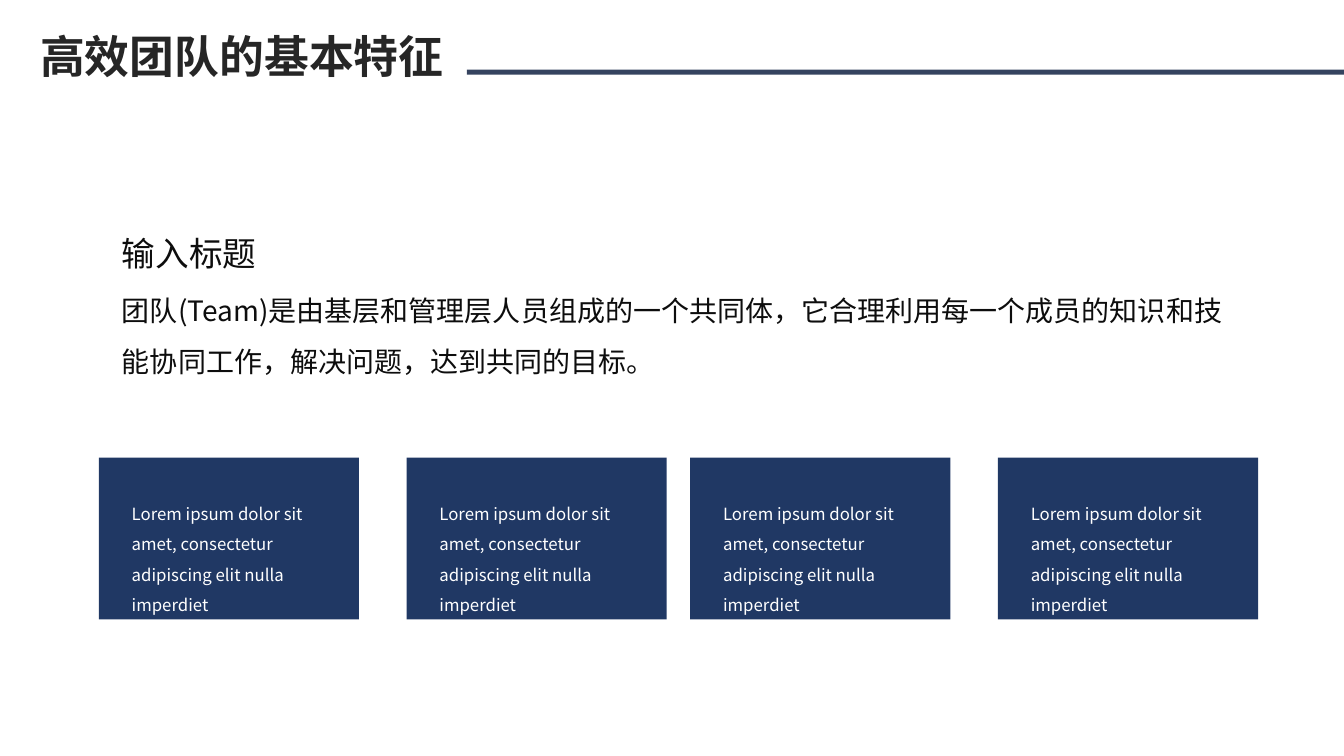
from lxml import etree
from pptx import Presentation
from pptx.dml.color import RGBColor
from pptx.enum.shapes import MSO_SHAPE
from pptx.enum.text import MSO_ANCHOR, MSO_AUTO_SIZE
from pptx.oxml.ns import qn
from pptx.util import Pt

RECTANGLE = MSO_SHAPE.RECTANGLE
TOP, MIDDLE = MSO_ANCHOR.TOP, MSO_ANCHOR.MIDDLE
GROW = MSO_AUTO_SIZE.SHAPE_TO_FIT_TEXT
FONT = "Noto Sans CJK SC"
NAVY = "203864"
CARD_TEXT = "Lorem ipsum dolor sit amet, consectetur adipiscing elit nulla imperdiet"

deck = Presentation()
deck.slide_width, deck.slide_height = Pt(960), Pt(540)
page = deck.slides.add_slide(deck.slide_layouts[6])


def add_block(left, top, width, height, color):
    block = page.shapes.add_shape(RECTANGLE, Pt(left), Pt(top), Pt(width), Pt(height))
    block.shadow.inherit = False
    block.fill.solid()
    block.fill.fore_color.rgb = RGBColor.from_string(color)
    block.line.fill.background()


def add_text(text, left, top, width, height, *, size, color, bold=False,
             spacing=1.0, margins=(7.2, 3.6), anchor=TOP, wrap=True):
    box = page.shapes.add_textbox(Pt(left), Pt(top), Pt(width), Pt(height))
    frame = box.text_frame
    frame.word_wrap = wrap
    frame.auto_size = GROW
    frame.vertical_anchor = anchor
    frame.margin_left = frame.margin_right = Pt(margins[0])
    frame.margin_top = frame.margin_bottom = Pt(margins[1])
    para = frame.paragraphs[0]
    para.line_spacing = spacing
    span = para.add_run()
    span.text = text
    span.font.size = Pt(size)
    span.font.bold = bold
    span.font.color.rgb = RGBColor.from_string(color)
    span.font.name = FONT
    # Chinese characters take their font from the East Asian setting
    etree.SubElement(span.font._element, qn("a:ea"), typeface=FONT)


# Heading and rule
add_block(333.4, 49.7, 626.6, 3.6, "35435F")
add_text("高效团队的基本特征", 21.6, 16.6, 362, 46, size=32, color="262626", bold=True)

# Introduction
add_text("输入标题", 87.1, 154.8, 97.2, 38.2, size=24, color="0D0D0D",
         spacing=1.5, margins=(0, 0), anchor=MIDDLE, wrap=False)
add_text("团队(Team)是由基层和管理层人员组成的一个共同体，它合理利用每一个成员的知识和技能协同工作，解决问题，达到共同的目标。",
         87.1, 198, 802.8, 105.1, size=20, color="0D0D0D", spacing=1.5, margins=(0, 0))

# Two pairs of cards
for pair_left in (70.6, 493):
    for card_left in (pair_left, pair_left + 219.8):
        add_block(card_left, 326.9, 185.8, 115.6, NAVY)
        add_text(CARD_TEXT, card_left + 16.4, 349.2, 152.6, 92.2,
                 size=12, color="FFFFFF", spacing=1.5)

deck.save("out.pptx")
